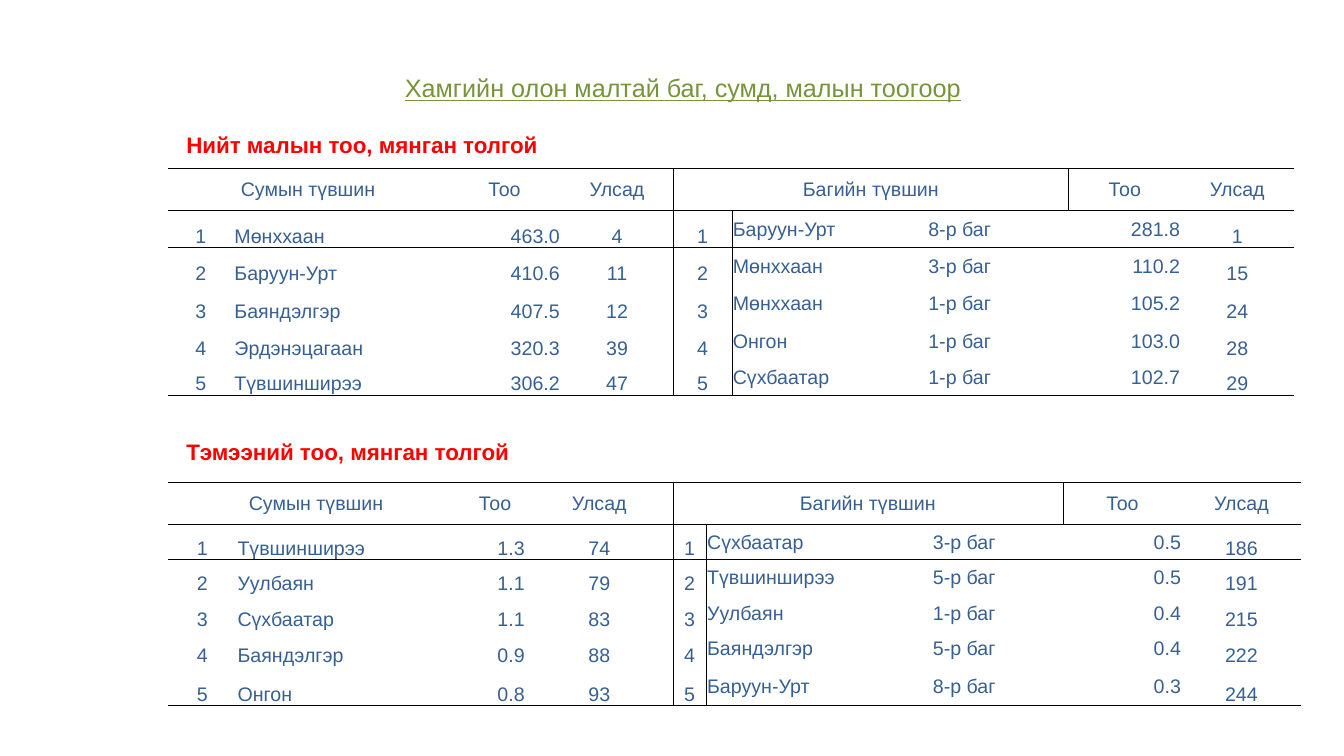
from dataclasses import dataclass

from lxml import etree
from pptx import Presentation
from pptx.dml.color import RGBColor
from pptx.enum.text import MSO_ANCHOR, MSO_AUTO_SIZE, PP_ALIGN
from pptx.oxml.ns import qn
from pptx.util import Pt

LEFT, CENTER, RIGHT = PP_ALIGN.LEFT, PP_ALIGN.CENTER, PP_ALIGN.RIGHT
TOP, MIDDLE, BOTTOM = MSO_ANCHOR.TOP, MSO_ANCHOR.MIDDLE, MSO_ANCHOR.BOTTOM
NO_FIT = MSO_AUTO_SIZE.NONE
NO_STYLE = "{2D5ABB26-0587-4C30-8999-92F81FD0307C}"


@dataclass(frozen=True)
class Theme:
    """Font, colours and sizes of the slide."""
    font: str = "Arial"
    title_color: str = "77933C"
    heading_color: str = "FF0000"
    table_color: str = "376092"
    border_color: str = "000000"
    title_size: int = 18
    heading_size: int = 16
    table_size: int = 14
    border: float = 0.5
    inset: float = 0.7


THEME = Theme()
HEADER = ["Сумын түвшин", "", "Тоо", "Улсад", "Багийн түвшин", "", "", "Тоо", "Улсад"]
HEADER_SPANS = [(0, 1), (4, 6)]
ALIGNS = [CENTER, LEFT, RIGHT, CENTER, CENTER, LEFT, LEFT, RIGHT, CENTER]
ANCHORS = [BOTTOM] * 5 + [MIDDLE] * 3 + [BOTTOM]
DIVIDER_COL = 4

LIVESTOCK_COLS = [46.8, 153.4, 80.4, 80.4, 41.8, 139.7, 100.8, 80.4, 80.4]
LIVESTOCK_HEIGHTS = [30.2] + [26.7] * 4 + [25.2]
LIVESTOCK = [
    ["Мөнххаан", "463.0", "4", "Баруун-Урт", "8-р баг", "281.8", "1"],
    ["Баруун-Урт", "410.6", "11", "Мөнххаан", "3-р баг", "110.2", "15"],
    ["Баяндэлгэр", "407.5", "12", "Мөнххаан", "1-р баг", "105.2", "24"],
    ["Эрдэнэцагаан", "320.3", "39", "Онгон", "1-р баг", "103.0", "28"],
    ["Түвшинширээ", "306.2", "47", "Сүхбаатар", "1-р баг", "102.7", "29"],
]
CAMEL_COLS = [49, 162.7, 43.9, 105.1, 23.8, 161.3, 93.6, 85, 85]
CAMEL_HEIGHTS = [29.5] + [25.4] * 4 + [28.1]
CAMELS = [
    ["Түвшинширээ", "1.3", "74", "Сүхбаатар", "3-р баг", "0.5", "186"],
    ["Уулбаян", "1.1", "79", "Түвшинширээ", "5-р баг", "0.5", "191"],
    ["Сүхбаатар", "1.1", "83", "Уулбаян", "1-р баг", "0.4", "215"],
    ["Баяндэлгэр", "0.9", "88", "Баяндэлгэр", "5-р баг", "0.4", "222"],
    ["Онгон", "0.8", "93", "Баруун-Урт", "8-р баг", "0.3", "244"],
]


def style_text(tf, text, size, color, align=LEFT, bold=False, underline=False):
    """Set one paragraph of text and its format."""
    tf.text = text
    p = tf.paragraphs[0]
    p.alignment = align
    for r in p.runs:
        r.font.name = THEME.font
        r.font.size = Pt(size)
        r.font.bold = bold
        r.font.underline = underline
        r.font.color.rgb = RGBColor.from_string(color)


def set_title(s, text, x, y, w, h):
    """Place and format the title placeholder."""
    sp = s.shapes.title
    sp.left, sp.top, sp.width, sp.height = Pt(x), Pt(y), Pt(w), Pt(h)
    tf = sp.text_frame
    tf.auto_size = NO_FIT
    tf.vertical_anchor = TOP
    style_text(tf, text, THEME.title_size, THEME.title_color, underline=True)


def add_heading(s, text, x, y, w, h):
    """Add a bold heading above a table."""
    tf = s.shapes.add_textbox(Pt(x), Pt(y), Pt(w), Pt(h)).text_frame
    tf.word_wrap = True
    style_text(tf, text, THEME.heading_size, THEME.heading_color, bold=True)


def add_border(cell, side):
    """Draw one side (L, R, T or B) of a cell."""
    ln = etree.SubElement(cell._tc.get_or_add_tcPr(), qn(f"a:ln{side}"), w=str(Pt(THEME.border)))
    fill = etree.SubElement(ln, qn("a:solidFill"))
    etree.SubElement(fill, qn("a:srgbClr"), val=THEME.border_color)


def border_sides(row, col, last_row):
    """Return the sides that carry a line, in schema order."""
    rules = [("L", col == DIVIDER_COL), ("R", col == DIVIDER_COL - 1),
             ("T", row in (0, 1)), ("B", row in (0, last_row))]
    return [side for side, drawn in rules if drawn]


def format_cell(cell, text, align, anchor, sides):
    """Fill in one cell with its text, margins and lines."""
    cell.margin_left = cell.margin_right = cell.margin_top = Pt(THEME.inset)
    cell.margin_bottom = 0
    cell.vertical_anchor = anchor
    for side in sides:
        add_border(cell, side)
    cell.fill.background()
    style_text(cell.text_frame, text, THEME.table_size, THEME.table_color, align)


def add_ranking(s, records, x, y, widths, heights):
    """Add a table ranking districts on the left and subdistricts on the right."""
    rows = [HEADER] + [[str(n), *rec[:3], str(n), *rec[3:]] for n, rec in enumerate(records, 1)]
    table = s.shapes.add_table(len(rows), len(widths), Pt(x), Pt(y),
                               Pt(sum(widths)), Pt(sum(heights))).table
    table.first_row = table.horz_banding = False
    table._tbl.tblPr.find(qn("a:tableStyleId")).text = NO_STYLE
    for column, width in zip(table.columns, widths):
        column.width = Pt(width)
    for row, height in zip(table.rows, heights):
        row.height = Pt(height)
    for i, row in enumerate(rows):
        for j, text in enumerate(row):
            align, anchor = (ALIGNS[j], ANCHORS[j]) if i else (CENTER, MIDDLE)
            format_cell(table.cell(i, j), text, align, anchor, border_sides(i, j, len(rows) - 1))
    for first, last in HEADER_SPANS:
        table.cell(0, first).merge(table.cell(0, last))


def main():
    """Build the slide and save it."""
    prs = Presentation()
    prs.slide_width, prs.slide_height = Pt(960), Pt(540)
    s = prs.slides.add_slide(prs.slide_layouts[5])
    set_title(s, "Хамгийн олон малтай баг, сумд, малын тоогоор", 282, 48.2, 420, 29)
    add_ranking(s, LIVESTOCK, 120, 120, LIVESTOCK_COLS, LIVESTOCK_HEIGHTS)
    add_heading(s, "Нийт малын тоо, мянган толгой", 126, 90, 420, 26.6)
    add_heading(s, "Тэмээний тоо, мянган толгой", 126, 309.6, 420, 26.6)
    add_ranking(s, CAMELS, 120, 344.8, CAMEL_COLS, CAMEL_HEIGHTS)
    prs.save("out.pptx")


if __name__ == "__main__":
    main()
